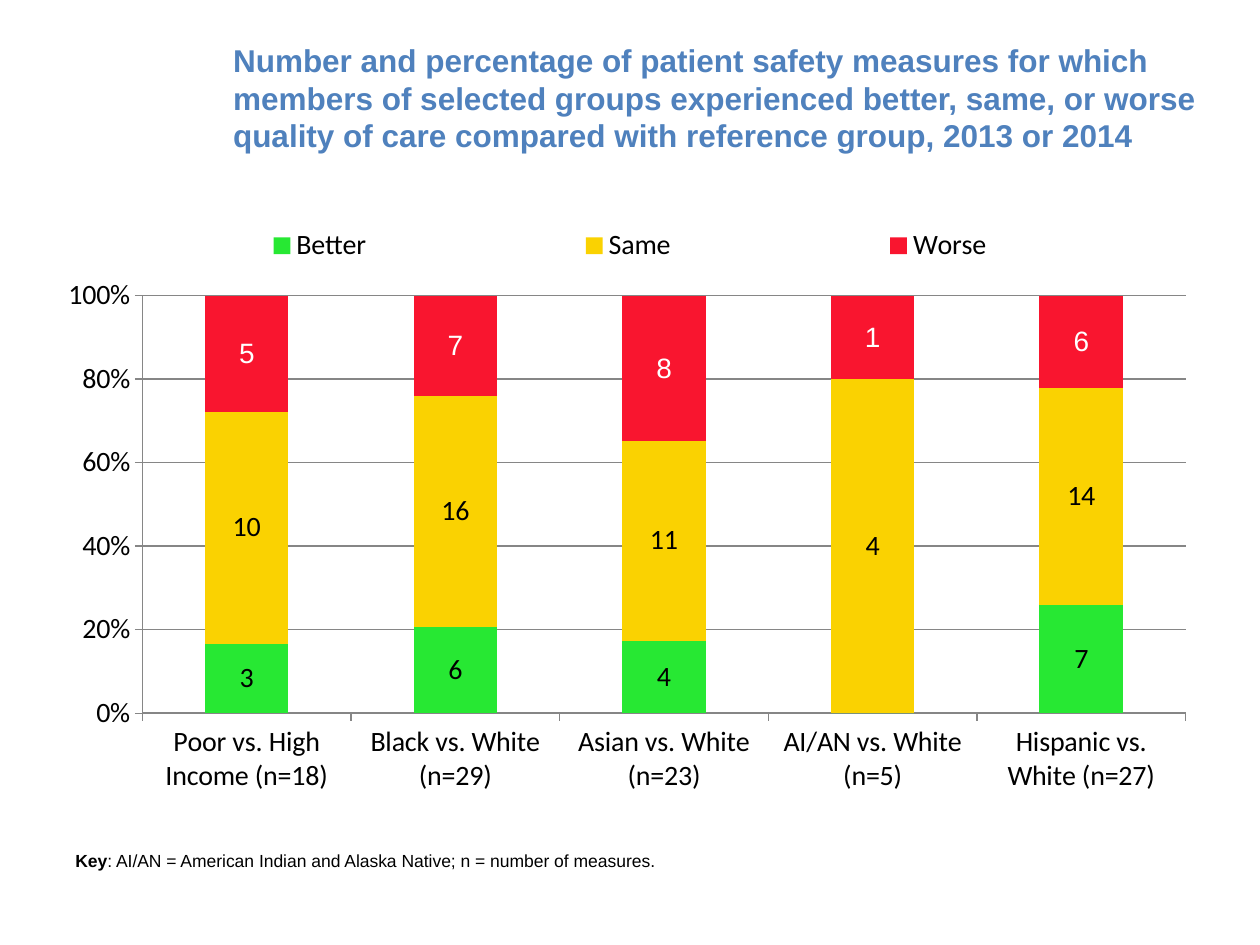
"""Build the patient safety slide with its stacked percentage chart."""
from dataclasses import dataclass

import lxml.etree
import pptx
import pptx.chart.data
import pptx.dml.color
import pptx.enum.chart
import pptx.enum.text
import pptx.oxml.ns
import pptx.util

Cm = pptx.util.Cm
Pt = pptx.util.Pt
RGBColor = pptx.dml.color.RGBColor
BLACK = RGBColor(0x00, 0x00, 0x00)
WHITE = RGBColor(0xFF, 0xFF, 0xFF)
BLUE = RGBColor(0x4F, 0x81, 0xBD)
GREEN = RGBColor(0x27, 0xE8, 0x33)
YELLOW = RGBColor(0xFA, 0xD2, 0x01)
RED = RGBColor(0xF9, 0x15, 0x2F)
GRAY = RGBColor(0x86, 0x86, 0x86)

TITLE = {"name": "Arial", "size": Pt(18), "bold": True, "color": BLUE}
NOTE = {"name": "Arial", "size": Pt(10), "bold": False, "color": BLACK}
KEY = NOTE | {"bold": True}
LABEL = {"name": "Calibri", "size": Pt(16), "bold": False, "color": BLACK}
LIGHT = LABEL | {"name": "Arial", "color": WHITE}


@dataclass
class Band:
    name: str
    values: tuple[int, ...]
    fill: RGBColor
    style: dict


@dataclass
class Block:
    box: tuple[float, float, float, float]
    runs: list[tuple[str, dict]]
    frame: dict


GROUPS = (
    "Poor vs. High Income (n=18)",
    "Black vs. White (n=29)",
    "Asian vs. White (n=23)",
    "AI/AN vs. White (n=5)",
    "Hispanic vs. White (n=27)",
)
BANDS = [
    Band("Better", (3, 6, 4, 0, 7), GREEN, LABEL),
    Band("Same", (10, 16, 11, 4, 14), YELLOW, LABEL),
    Band("Worse", (5, 7, 8, 1, 6), RED, LIGHT),
]
BLOCKS = [
    Block(
        (4.45, 0.76, 20.12, 2.41),
        [(
            "Number and percentage of patient safety measures for which members of "
            "selected groups experienced better, same, or worse quality of care "
            "compared with reference group, 2013 or 2014",
            TITLE,
        )],
        {"word_wrap": True, "vertical_anchor": pptx.enum.text.MSO_ANCHOR.MIDDLE},
    ),
    Block(
        (1.27, 17.02, 12.34, 0.69),
        [
            ("Key", KEY),
            (": AI/AN = American Indian and Alaska Native; n = number of measures.", NOTE),
        ],
        {"word_wrap": False, "auto_size": pptx.enum.text.MSO_AUTO_SIZE.SHAPE_TO_FIT_TEXT},
    ),
]


def apply(item, style: dict) -> None:
    """Set each format value on an object."""
    for key, value in style.items():
        if key == "color":
            item.color.rgb = value
        else:
            setattr(item, key, value)


def place(node, index: int, box: tuple[float, ...], inner: bool = False) -> None:
    """Give a chart part a manual layout in fractions of the chart."""
    tag = pptx.oxml.ns.qn
    for old in node.findall(tag("c:layout")):
        node.remove(old)
    layout = lxml.etree.Element(tag("c:layout"))
    node.insert(index, layout)
    manual = lxml.etree.SubElement(layout, tag("c:manualLayout"))
    rules = [("layoutTarget", "inner")] if inner else []
    rules += [("xMode", "edge"), ("yMode", "edge")]
    rules += zip("xywh", map(str, box))
    for name, value in rules:
        lxml.etree.SubElement(manual, tag(f"c:{name}")).set("val", value)


def write(slide, block: Block) -> None:
    """Add one text box."""
    frame = slide.shapes.add_textbox(*map(Cm, block.box)).text_frame
    apply(frame, block.frame)
    for text, style in block.runs:
        run = frame.paragraphs[0].add_run()
        run.text = text
        apply(run.font, style)


def plot(slide, bands: list[Band]) -> None:
    """Add the stacked chart with its axes, legend and labels."""
    kinds = pptx.enum.chart
    data = pptx.chart.data.CategoryChartData()
    data.categories = GROUPS
    for band in bands:
        data.add_series(band.name, band.values)
    chart = slide.shapes.add_chart(
        kinds.XL_CHART_TYPE.COLUMN_STACKED_100,
        *map(Cm, (1.27, 4.45, 22.86, 12.57)), data,
    ).chart
    apply(chart, {"has_title": False, "has_legend": True})
    apply(chart.font, NOTE)
    apply(chart.plots[0], {"gap_width": 150, "overlap": 100, "vary_by_categories": False})
    for band, series in zip(bands, chart.plots[0].series):
        series.format.fill.solid()
        series.format.fill.fore_color.rgb = band.fill
        labels = series.data_labels
        apply(labels, {
            "show_value": True,
            "number_format": "0;;;",
            "number_format_is_linked": False,
            "position": kinds.XL_LABEL_POSITION.CENTER,
        })
        apply(labels.font, band.style)
    for axis in (chart.category_axis, chart.value_axis):
        axis.major_tick_mark = kinds.XL_TICK_MARK.OUTSIDE
        apply(axis.tick_labels.font, LABEL)
        apply(axis.format.line, {"color": GRAY, "width": Pt(0.75)})
    apply(chart.value_axis, {
        "minimum_scale": 0, "maximum_scale": 1, "major_unit": 0.2,
        "has_major_gridlines": True,
    })
    apply(chart.value_axis.tick_labels, {
        "number_format": "0%", "number_format_is_linked": False,
    })
    apply(chart.value_axis.major_gridlines.format.line, {"color": GRAY, "width": Pt(1)})
    apply(chart.legend, {
        "position": kinds.XL_LEGEND_POSITION.TOP, "include_in_layout": False,
    })
    apply(chart.legend.font, LABEL)
    place(chart.legend._element, 1, (0, 0, 1, 0.08))
    place(chart._chartSpace.chart.plotArea, 0, (0.07, 0.12, 0.92, 0.67), True)


def main() -> None:
    """Build and save the slide."""
    deck = pptx.Presentation()
    apply(deck, {"slide_width": Cm(25.4), "slide_height": Cm(19.05)})
    slide = deck.slides.add_slide(deck.slide_layouts[6])
    plot(slide, BANDS)
    for block in BLOCKS:
        write(slide, block)
    deck.save("out.pptx")


if __name__ == "__main__":
    main()
